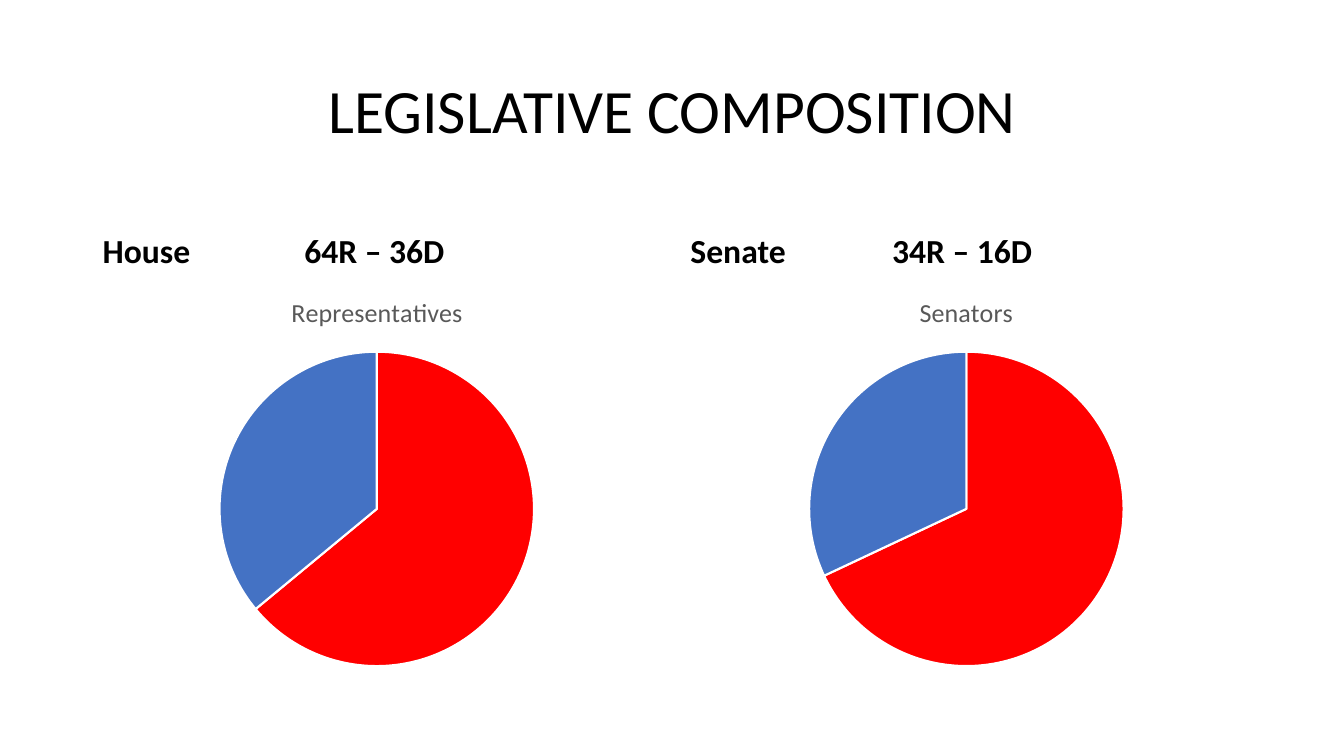
import pptx
import pptx.chart.data
import pptx.dml.color
import pptx.enum.chart
import pptx.enum.text
import pptx.oxml
import pptx.oxml.ns
import pptx.util
from pptx.util import Inches

BLACK = pptx.dml.color.RGBColor(0x00, 0x00, 0x00)
GREY = pptx.dml.color.RGBColor(0x59, 0x59, 0x59)
WHITE = pptx.dml.color.RGBColor(0xFF, 0xFF, 0xFF)
RED = pptx.dml.color.RGBColor(0xFF, 0x00, 0x00)
BLUE = pptx.dml.color.RGBColor(0x44, 0x72, 0xC4)
FONT = "Calibri"

HEADING_TOP, HEADING_HEIGHT = 1.84, 0.9
PIE_TOP, PIE_HEIGHT = 2.74, 4.03
PIE_DIAMETER, PIE_OFFSET = 3.12, 0.75

CHAMBERS = [
    # left, width, chamber, seats, members, shares
    (0.92, 5.64, "House", "64R – 36D", "Representatives", (64, 36)),
    (6.75, 5.67, "Senate", "34R – 16D", "Senators", (68, 32)),
]


def set_font(font, size, color, bold=False):
    font.name = FONT
    font.size = pptx.util.Pt(size)
    font.color.rgb = color
    font.bold = bold


def write_text(frame, text, size, color=BLACK, bold=False, align=None,
               anchor=None, tab=None, line_spacing=None):
    """Fill a text frame with one formatted paragraph; tab is a stop in inches."""
    frame.text = text
    paragraph = frame.paragraphs[0]
    if tab:
        stops = pptx.oxml.parse_xml(
            f'<a:tabLst {pptx.oxml.ns.nsdecls("a")}>'
            f'<a:tab pos="{Inches(tab)}" algn="l"/></a:tabLst>')
        paragraph._p.get_or_add_pPr().append(stops)
    if align is not None:
        paragraph.alignment = align
    if anchor is not None:
        frame.word_wrap = True
        frame.vertical_anchor = anchor
    if line_spacing:
        paragraph.line_spacing = line_spacing
    set_font(paragraph.runs[0].font, size, color, bold)


def add_title(slide, text):
    title = slide.shapes.title
    title.left, title.top = Inches(0.92), Inches(0.4)
    title.width, title.height = Inches(11.5), Inches(1.45)
    write_text(title.text_frame, text, 44, align=pptx.enum.text.PP_ALIGN.CENTER,
               anchor=pptx.enum.text.MSO_ANCHOR.MIDDLE, line_spacing=0.9)


def add_heading(slide, left, width, chamber, seats):
    heading = slide.shapes.add_textbox(Inches(left), Inches(HEADING_TOP),
                                       Inches(width), Inches(HEADING_HEIGHT))
    write_text(heading.text_frame, f"{chamber}\t{seats}", 24, bold=True, tab=2,
               anchor=pptx.enum.text.MSO_ANCHOR.BOTTOM, line_spacing=0.9)


def fix_plot_area(chart, width):
    """Centre the pie across the chart at its fixed diameter."""
    bounds = {
        "x": (width - PIE_DIAMETER) / 2 / width,
        "y": PIE_OFFSET / PIE_HEIGHT,
        "w": PIE_DIAMETER / width,
        "h": PIE_DIAMETER / PIE_HEIGHT,
    }
    values = "".join(f'<c:{key} val="{value:.3f}"/>' for key, value in bounds.items())
    layout = pptx.oxml.parse_xml(
        f'<c:layout {pptx.oxml.ns.nsdecls("c")}><c:manualLayout>'
        '<c:layoutTarget val="inner"/><c:xMode val="edge"/><c:yMode val="edge"/>'
        f'{values}</c:manualLayout></c:layout>')
    plot_area = chart._chartSpace.chart.plotArea
    for automatic in plot_area.findall(pptx.oxml.ns.qn("c:layout")):
        plot_area.remove(automatic)
    plot_area.insert(0, layout)


def add_pie(slide, left, width, members, shares):
    data = pptx.chart.data.CategoryChartData()
    data.categories = ["1", "2"]
    data.add_series(members, shares)
    chart = slide.shapes.add_chart(
        pptx.enum.chart.XL_CHART_TYPE.PIE, Inches(left), Inches(PIE_TOP),
        Inches(width), Inches(PIE_HEIGHT), data).chart
    set_font(chart.font, 10, BLACK)
    chart.has_legend = False
    chart.has_title = True
    write_text(chart.chart_title.text_frame, members, 18.6, color=GREY)
    chart.chart_title.include_in_layout = False
    plot = chart.plots[0]
    plot.vary_by_categories = True
    for index, color in enumerate((RED, BLUE)):
        slice_format = plot.series[0].points[index].format
        slice_format.fill.solid()
        slice_format.fill.fore_color.rgb = color
        slice_format.line.color.rgb = WHITE
        slice_format.line.width = pptx.util.Pt(1.5)
    fix_plot_area(chart, width)


def main():
    presentation = pptx.Presentation()
    presentation.slide_width = Inches(13.33)
    presentation.slide_height = Inches(7.5)
    slide = presentation.slides.add_slide(presentation.slide_layouts[5])
    add_title(slide, "LEGISLATIVE COMPOSITION")
    for left, width, chamber, seats, members, shares in CHAMBERS:
        add_heading(slide, left, width, chamber, seats)
        add_pie(slide, left, width, members, shares)
    presentation.save("out.pptx")


if __name__ == "__main__":
    main()
